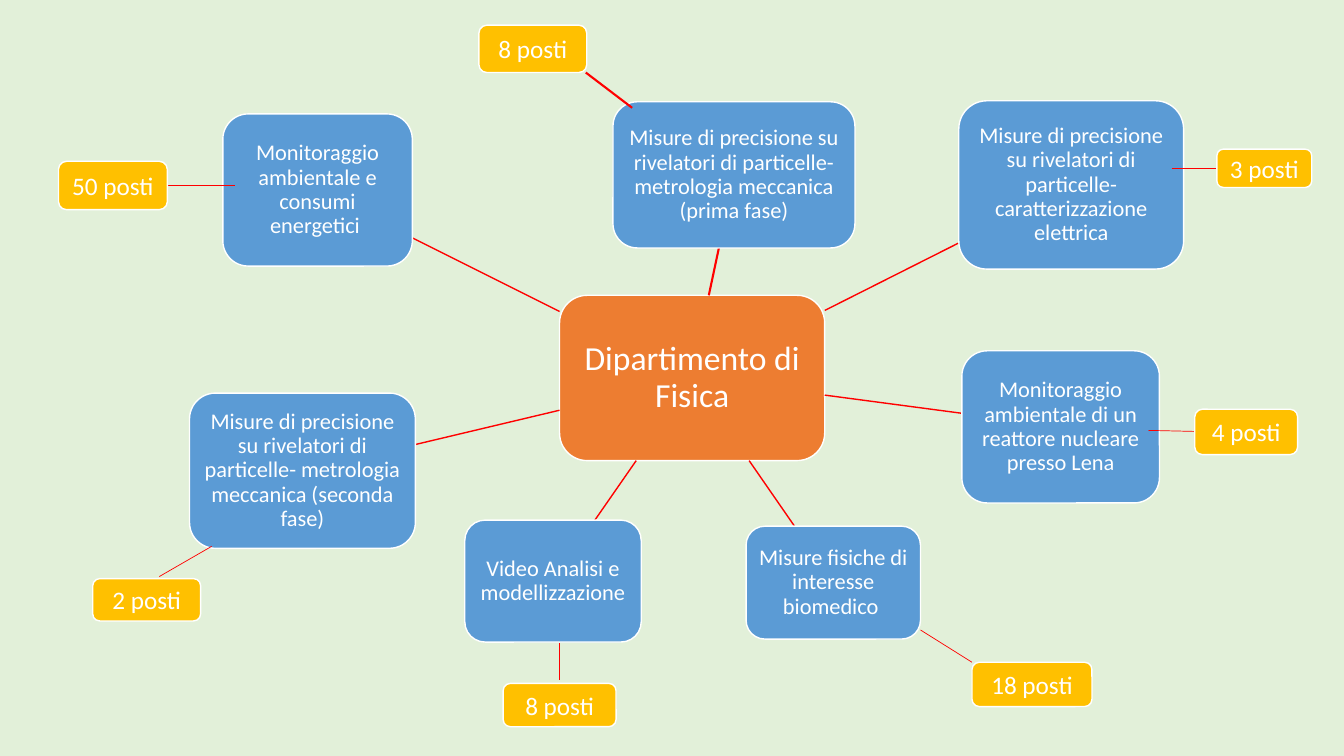
from dataclasses import dataclass

from lxml import etree
from pptx import Presentation
from pptx import util as u
from pptx.dml.color import RGBColor
from pptx.enum import shapes, text
from pptx.oxml.ns import qn
from pptx.slide import Slide

EMU_PER_PX = 9144  # 100 px to the inch


@dataclass(frozen=True)
class Theme:
    background: str = "E2F0D9"
    department: str = "ED7D31"
    activity: str = "5B9BD5"
    seats: str = "FFC000"
    light: str = "FFFFFF"
    link: str = "FF0000"
    font: str = "Calibri"
    department_size: int = 24
    activity_size: int = 16
    seats_size: int = 18
    outline: float = 1


THEME = Theme()


@dataclass(frozen=True)
class BoxStyle:
    fill: str
    size: int
    margin_x: int
    margin_y: int
    line_spacing: float


DEPARTMENT = BoxStyle(THEME.department, THEME.department_size, 7, 7, 0.9)
ACTIVITY = BoxStyle(THEME.activity, THEME.activity_size, 4, 4, 0.9)
SEATS = BoxStyle(THEME.seats, THEME.seats_size, 10, 5, 1.0)


@dataclass(frozen=True)
class Box:
    caption: str
    left: int
    top: int
    width: int
    height: int


@dataclass(frozen=True)
class Link:
    x1: int
    y1: int
    x2: int
    y2: int
    weight: float


@dataclass(frozen=True)
class Branch:
    """An activity with its link to the department and its seat count."""
    activity: Box
    link: Link
    seats: Box
    seats_link: Link


CENTRE = Box("Dipartimento di Fisica", 555, 293, 263, 164)

BRANCHES = [
    Branch(
        Box("Misure di precisione su rivelatori di particelle- "
            "metrologia meccanica (prima fase)", 608, 101, 240, 145),
        Link(703, 293, 713, 246, 1.5),
        Box("8 posti", 475, 25, 107, 47),
        Link(581, 72, 627, 107, 1.5)),
    Branch(
        Box("Misure di precisione su rivelatori di particelle- "
            "caratterizzazione elettrica", 951, 100, 223, 167),
        Link(818, 308, 951, 241, 1),
        Box("3 posti", 1207, 148, 94, 38),
        Link(1162, 167, 1207, 167, 0.5)),
    Branch(
        Box("Monitoraggio ambientale di un reattore nucleare presso Lena",
            954, 348, 196, 151),
        Link(818, 392, 954, 410, 1),
        Box("4 posti", 1185, 406, 102, 45),
        Link(1139, 427, 1185, 428, 0.5)),
    Branch(
        Box("Misure fisiche di interesse biomedico ", 740, 522, 173, 112),
        Link(743, 457, 788, 522, 1),
        Box("18 posti", 964, 657, 119, 44),
        Link(913, 625, 964, 657, 0.5)),
    Branch(
        Box("Video Analisi e modellizzazione", 461, 516, 175, 121),
        Link(631, 457, 590, 516, 1),
        Box("8 posti", 499, 678, 112, 43),
        Link(555, 638, 555, 675, 0.5)),
    Branch(
        Box("Misure di precisione su rivelatori di particelle- "
            "metrologia meccanica (seconda fase)", 188, 390, 224, 154),
        Link(555, 407, 412, 441, 1),
        Box("2 posti", 92, 574, 107, 42),
        Link(210, 542, 158, 572, 0.5)),
    Branch(
        Box("Monitoraggio ambientale e consumi energetici ",
            221, 113, 188, 151),
        Link(555, 309, 409, 236, 1),
        Box("50 posti", 58, 160, 108, 48),
        Link(233, 184, 166, 184, 0.5)),
]


def px(length: int) -> u.Emu:
    return u.Emu(length * EMU_PER_PX)


def colour(code: str) -> RGBColor:
    return RGBColor.from_string(code)


def draw_box(slide: Slide, box: Box, style: BoxStyle) -> None:
    shape = slide.shapes.add_shape(
        shapes.MSO_SHAPE.ROUNDED_RECTANGLE,
        px(box.left), px(box.top), px(box.width), px(box.height))
    shape.shadow.inherit = False
    shape.fill.solid()
    shape.fill.fore_color.rgb = colour(style.fill)
    shape.line.color.rgb = colour(THEME.light)
    shape.line.width = u.Pt(THEME.outline)

    frame = shape.text_frame
    frame.word_wrap = True
    frame.vertical_anchor = text.MSO_ANCHOR.MIDDLE
    frame.margin_left = frame.margin_right = px(style.margin_x)
    frame.margin_top = frame.margin_bottom = px(style.margin_y)
    paragraph = frame.paragraphs[0]
    paragraph.text = box.caption
    paragraph.alignment = text.PP_ALIGN.CENTER
    paragraph.line_spacing = style.line_spacing
    paragraph.font.name = THEME.font
    paragraph.font.size = u.Pt(style.size)
    paragraph.font.color.rgb = colour(THEME.light)


def draw_link(slide: Slide, link: Link) -> None:
    connector = slide.shapes.add_connector(
        shapes.MSO_CONNECTOR.STRAIGHT,
        px(link.x1), px(link.y1), px(link.x2), px(link.y2))
    connector.line.color.rgb = colour(THEME.link)
    connector.line.width = u.Pt(link.weight)
    etree.SubElement(connector._element.spPr, qn("a:effectLst"))


def main() -> None:
    presentation = Presentation()
    presentation.slide_width = px(1333)
    presentation.slide_height = px(750)
    blank_layout = presentation.slide_layouts[6]
    slide = presentation.slides.add_slide(blank_layout)
    slide.background.fill.solid()
    slide.background.fill.fore_color.rgb = colour(THEME.background)

    draw_box(slide, CENTRE, DEPARTMENT)
    for branch in BRANCHES:
        draw_link(slide, branch.link)
        draw_box(slide, branch.activity, ACTIVITY)
        draw_link(slide, branch.seats_link)
        draw_box(slide, branch.seats, SEATS)

    presentation.save("out.pptx")


if __name__ == "__main__":
    main()
